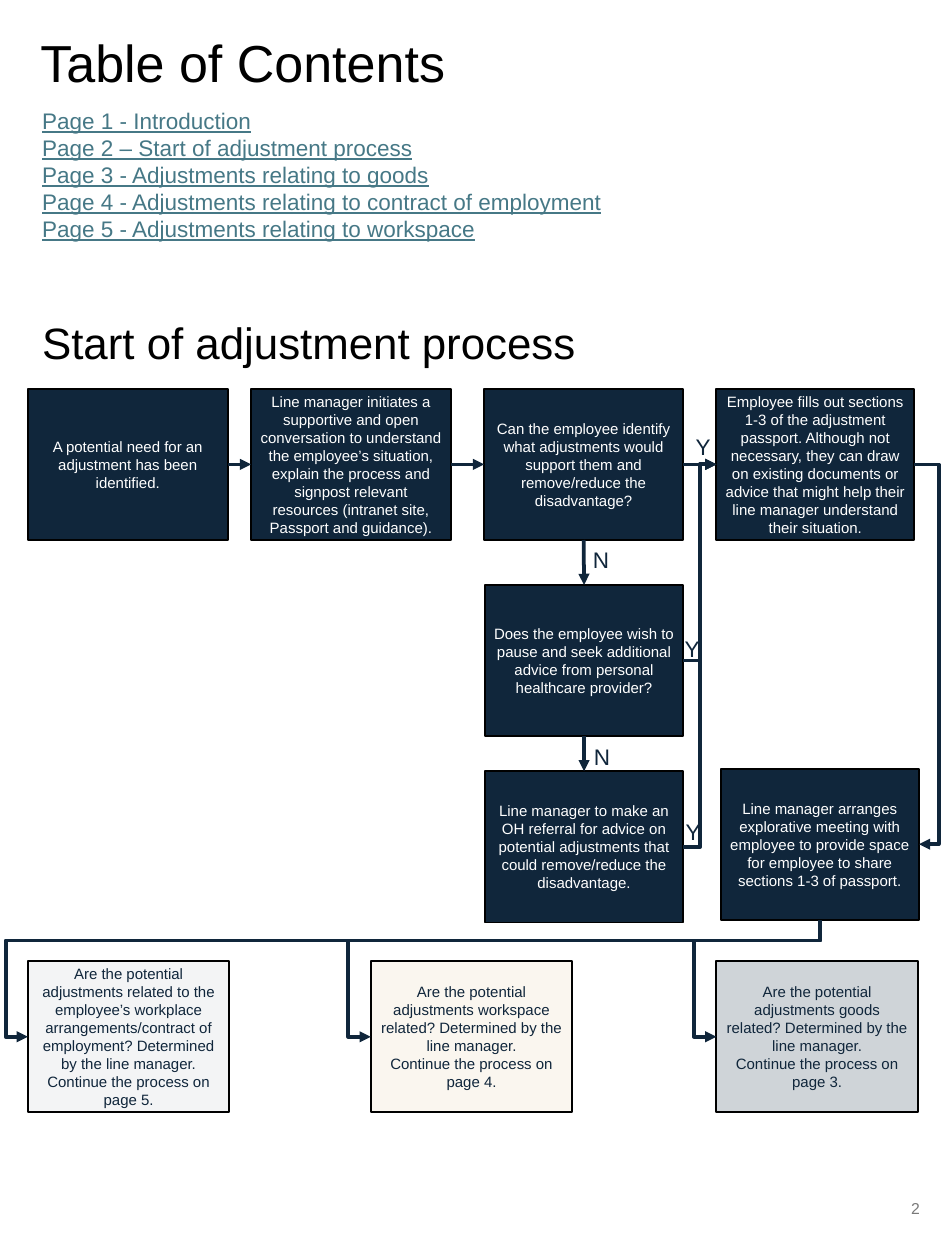
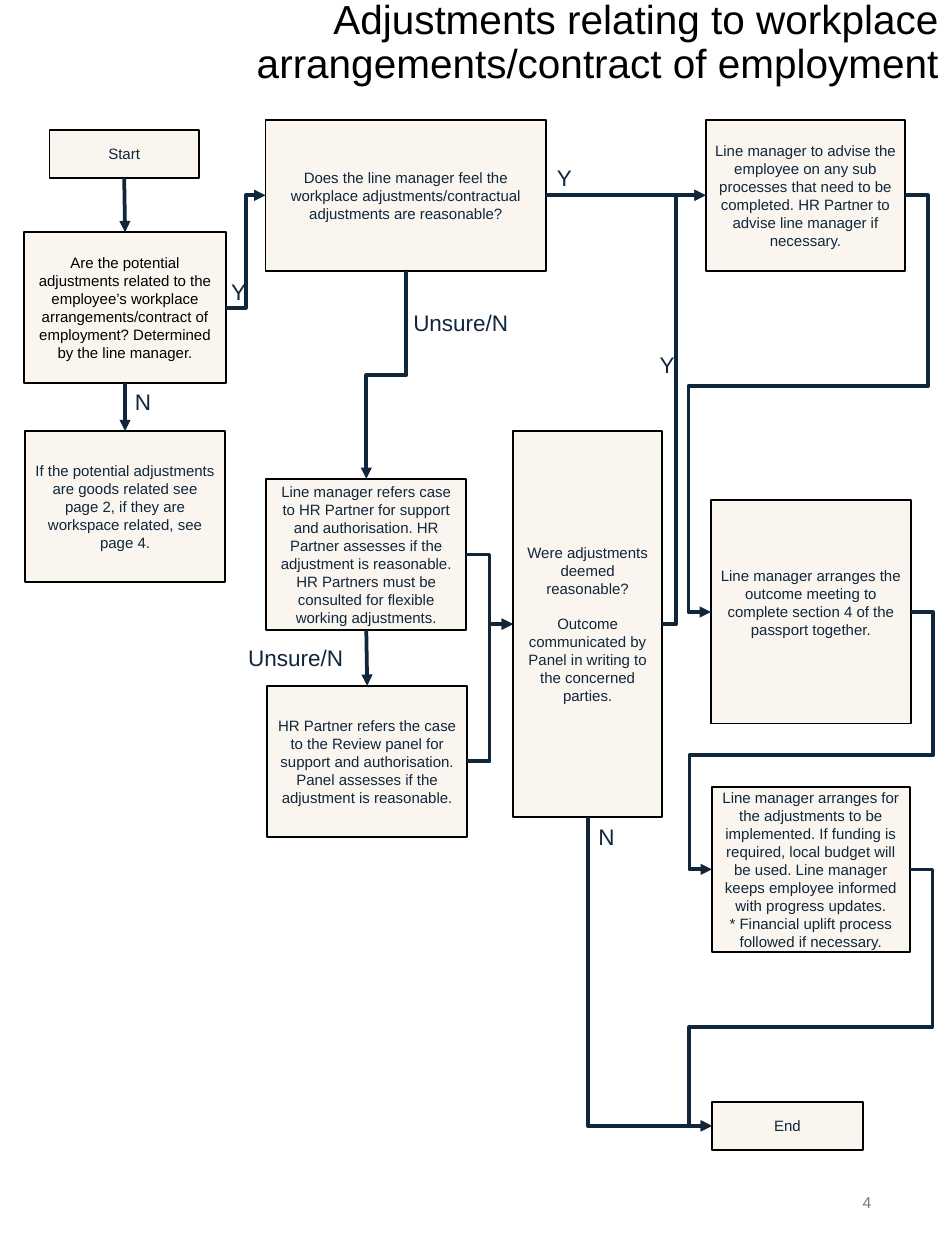
"""Build two flowchart slides about the workplace adjustment process."""
import pptx
import pptx.dml.color
import pptx.enum.shapes
import pptx.enum.text
import pptx.oxml
import pptx.oxml.ns
import pptx.util

Inches = pptx.util.Inches
ALIGN = pptx.enum.text.PP_ALIGN
MIDDLE = pptx.enum.text.MSO_ANCHOR.MIDDLE
CONNECTOR = pptx.enum.shapes.MSO_CONNECTOR

FONT = "Arial"
NAVY, WHITE, BLACK = "10263B", "FFFFFF", "000000"
CREAM, MIST, SILVER = "FAF6EF", "F3F4F5", "CFD4D8"
LINK, GREY = "467886", "797979"
TOP, LEFT, BOTTOM, RIGHT = range(4)
BOX_HEIGHT = 1.68


def color(value):
    """Return the colour for a hex string."""
    return pptx.dml.color.RGBColor.from_string(value)


def make_element(tag, **attributes):
    """Return a new drawing element with the given attributes."""
    element = pptx.oxml.parse_xml(f"<a:{tag} {pptx.oxml.ns.nsdecls('a')}/>")
    for name, value in attributes.items():
        element.set(name, str(value))
    return element


def write_text(shape, paragraphs, size, font_color, align, line_spacing=None,
               underline=None, gap=0):
    """Fill a shape with paragraphs set in one style."""
    frame = shape.text_frame
    frame.word_wrap = True
    for index, text in enumerate(paragraphs):
        paragraph = frame.add_paragraph() if index else frame.paragraphs[0]
        paragraph.alignment = align
        if line_spacing:
            paragraph.line_spacing = line_spacing
        if index and gap:
            paragraph.space_before = pptx.util.Pt(gap)
        run = paragraph.add_run()
        run.text = text
        run.font.name = FONT
        run.font.size = pptx.util.Pt(size)
        run.font.color.rgb = color(font_color)
        run.font.underline = underline


def add_text(slide, left, top, width, height, paragraphs, size, font_color,
             align=ALIGN.LEFT, anchor=MIDDLE, **style):
    """Add a text box."""
    shape = slide.shapes.add_textbox(
        Inches(left), Inches(top), Inches(width), Inches(height))
    shape.text_frame.vertical_anchor = anchor
    write_text(shape, paragraphs, size, font_color, align, **style)


def add_title(slide, left, top, width, height, text, size, align=ALIGN.LEFT):
    """Add a heading."""
    add_text(slide, left, top, width, height, [text], size, BLACK, align,
             line_spacing=0.9)


def add_page_number(slide, left, top, number):
    """Add the page number."""
    add_text(slide, left, top, 2.36, 0.75, [number], 12.6, GREY, ALIGN.RIGHT)


def add_label(slide, left, top, text, width=0.29):
    """Add the answer beside an arrow."""
    add_text(slide, left, top, width, 0.4, [text], 18, NAVY, ALIGN.CENTER,
             pptx.enum.text.MSO_ANCHOR.TOP)


def add_box(slide, left, top, width, *paragraphs, height=BOX_HEIGHT,
            fill=CREAM, font_color=NAVY, gap=0):
    """Add a step of the flowchart."""
    shape = slide.shapes.add_shape(
        pptx.enum.shapes.MSO_SHAPE.RECTANGLE,
        Inches(left), Inches(top), Inches(width), Inches(height))
    shape.shadow.inherit = False
    shape.fill.solid()
    shape.fill.fore_color.rgb = color(fill)
    shape.line.color.rgb = color(BLACK)
    shape.line.width = pptx.util.Pt(1.5)
    shape.text_frame.vertical_anchor = MIDDLE
    write_text(shape, paragraphs, 12, font_color, ALIGN.CENTER, gap=gap)
    return shape


def add_dark_box(slide, left, top, width, text):
    """Add a navy step with white text."""
    return add_box(slide, left, top, width, text, fill=NAVY, font_color=WHITE)


def side_middle(shape, side):
    """Return the middle point of one side of a box."""
    across = {LEFT: 0, RIGHT: shape.width}.get(side, shape.width // 2)
    down = {TOP: 0, BOTTOM: shape.height}.get(side, shape.height // 2)
    return shape.left + across, shape.top + down


def add_arrow(slide, source, source_side, target, target_side,
              kind=CONNECTOR.STRAIGHT):
    """Join two boxes with an arrow."""
    connector = slide.shapes.add_connector(kind, 0, 0, 0, 0)
    connector.begin_connect(source, source_side)
    connector.end_connect(target, target_side)
    connector.line.color.rgb = color(NAVY)
    connector.line.width = pptx.util.Pt(3)
    connector.line._get_or_add_ln().append(
        make_element("tailEnd", type="triangle"))
    connector.element.spPr.append(make_element("effectLst"))
    return connector


def add_elbow(slide, source, source_side, target, target_side, *bends):
    """Join two boxes with a bent arrow turning at the given inches."""
    connector = add_arrow(slide, source, source_side, target, target_side,
                          CONNECTOR.ELBOW)
    start = side_middle(source, source_side)
    end = side_middle(target, target_side)
    span = [end[axis] - start[axis] for axis in (0, 1)]
    vertical = source_side in (TOP, BOTTOM)
    width, height = abs(span[0]), abs(span[1])
    center_x, center_y = (start[0] + end[0]) // 2, (start[1] + end[1]) // 2
    if vertical:
        width, height = height, width
    connector.left, connector.top = center_x - width // 2, center_y - height // 2
    connector.width, connector.height = width, height

    turned_right = vertical and span[0] > 0
    flip_h = turned_right if vertical else span[0] < 0
    flip_v = not vertical and span[1] < 0
    angle = (270 if turned_right else 90) if vertical else 0
    transform = connector.element.spPr.find(pptx.oxml.ns.qn("a:xfrm"))
    transform.set("rot", str(angle * 60000))
    transform.set("flipH", str(int(flip_h)))
    transform.set("flipV", str(int(flip_v)))

    geometry = connector.element.spPr.find(pptx.oxml.ns.qn("a:prstGeom"))
    geometry.set("prst", f"bentConnector{len(bends) + 2}")
    guides = geometry.find(pptx.oxml.ns.qn("a:avLst"))
    if guides is None:
        guides = make_element("avLst")
        geometry.append(guides)
    for index, bend in enumerate(bends):
        axis = (index + vertical) % 2
        ratio = (Inches(bend) - start[axis]) / span[axis]
        guides.append(make_element(
            "gd", name=f"adj{index + 1}", fmla=f"val {round(ratio * 100000)}"))


def build_start(slide):
    """Build the contents and the start of the process."""
    add_title(slide, 0.35, 0.43, 9.06, 0.6, "Table of Contents", 41.6)
    add_text(slide, 0.37, 1.14, 9.35, 1.62, [
        "Page 1 - Introduction",
        "Page 2 – Start of adjustment process",
        "Page 3 - Adjustments relating to goods",
        "Page 4 - Adjustments relating to contract of employment",
        "Page 5 - Adjustments relating to workspace",
    ], 18, LINK, anchor=pptx.enum.text.MSO_ANCHOR.TOP, underline=True)
    add_title(slide, 0.37, 3.5, 6.19, 0.68, "Start of adjustment process", 35.1)

    row = 4.32
    need = add_dark_box(slide, 0.31, row, 2.22,
                        "A potential need for an adjustment has been identified.")
    conversation = add_dark_box(
        slide, 2.79, row, 2.22,
        "Line manager initiates a supportive and open conversation to "
        "understand the employee’s situation, explain the process and signpost "
        "relevant resources (intranet site, Passport and guidance).")
    identify = add_dark_box(
        slide, 5.38, row, 2.21,
        "Can the employee identify what adjustments would support them and "
        "remove/reduce the disadvantage?")
    passport = add_dark_box(
        slide, 7.96, row, 2.2,
        "Employee fills out sections 1-3 of the adjustment passport. Although "
        "not necessary, they can draw on existing documents or advice that "
        "might help their line manager understand their situation.")
    advice = add_dark_box(
        slide, 5.39, 6.5, 2.2,
        "Does the employee wish to pause and seek additional advice from "
        "personal healthcare provider?")
    referral = add_dark_box(
        slide, 5.39, 8.57, 2.2,
        "Line manager to make an OH referral for advice on potential "
        "adjustments that could remove/reduce the disadvantage.")
    meeting = add_dark_box(
        slide, 8.01, 8.54, 2.2,
        "Line manager arranges explorative meeting with employee to provide "
        "space for employee to share sections 1-3 of passport.")

    for source, target in ((need, conversation), (conversation, identify),
                           (identify, passport)):
        add_arrow(slide, source, RIGHT, target, LEFT)
    for source, target in ((identify, advice), (advice, referral)):
        add_arrow(slide, source, BOTTOM, target, TOP)
    for source in (advice, referral):
        add_elbow(slide, source, RIGHT, passport, LEFT, 7.78)
    add_elbow(slide, passport, RIGHT, meeting, RIGHT, 10.43)

    outcomes = (
        (0.31, MIST, "related to the employee’s workplace "
                     "arrangements/contract of employment", 5),
        (4.12, CREAM, "workspace related", 4),
        (7.96, SILVER, "goods related", 3),
    )
    for left, fill, topic, page in outcomes:
        outcome = add_box(
            slide, left, 10.68, 2.24,
            f"Are the potential adjustments {topic}? "
            "Determined by the line manager.",
            f"Continue the process on page {page}.", fill=fill)
        add_elbow(slide, meeting, BOTTOM, outcome, LEFT, 10.45, left - 0.25)

    for left, top, answer in ((7.63, 4.76, "Y"), (7.51, 7.01, "Y"),
                              (7.52, 9.04, "Y"), (6.49, 6.02, "N"),
                              (6.5, 8.21, "N")):
        add_label(slide, left, top, answer)
    add_page_number(slide, 7.96, 13.05, "2")


def build_contract(slide):
    """Build the process for contract adjustments."""
    add_title(slide, 0, 0.02, 10.53, 0.92,
              "Adjustments relating to workplace arrangements/contract of "
              "employment", 32.4, ALIGN.RIGHT)
    start = add_box(slide, 0.55, 1.44, 1.66, "Start", height=0.54)
    related = add_box(
        slide, 0.27, 2.58, 2.24,
        "Are the potential adjustments related to the employee’s workplace "
        "arrangements/contract of employment? Determined by the line manager.",
        font_color=BLACK)
    other = add_box(
        slide, 0.28, 4.79, 2.22,
        "If the potential adjustments are goods related see page 2, if they "
        "are workspace related, see page 4.")
    reasonable = add_box(
        slide, 2.95, 1.33, 3.12,
        "Does the line manager feel the workplace adjustments/contractual "
        "adjustments are reasonable?")
    partner = add_box(
        slide, 2.96, 5.32, 2.22,
        "Line manager refers case to HR Partner for support and authorisation. "
        "HR Partner assesses if the adjustment is reasonable.",
        "HR Partners must be consulted for flexible working adjustments.")
    panel = add_box(
        slide, 2.97, 7.62, 2.22,
        "HR Partner refers the case to the Review panel for support and "
        "authorisation. Panel assesses if the adjustment is reasonable.")
    verdict = add_box(
        slide, 5.7, 4.79, 1.66, "Were adjustments deemed reasonable?",
        "Outcome communicated by Panel in writing to the concerned parties.",
        height=4.29, gap=14)
    advise = add_box(
        slide, 7.84, 1.33, 2.22,
        "Line manager to advise the employee on any sub processes that need to "
        "be completed. HR Partner to advise line manager if necessary.")
    meeting = add_box(
        slide, 7.9, 5.56, 2.22,
        "Line manager arranges the outcome meeting to complete section 4 of "
        "the passport together.", height=2.48)
    meeting.text_frame.margin_bottom = Inches(0.25)
    implement = add_box(
        slide, 7.91, 8.74, 2.2,
        "Line manager arranges for the adjustments to be implemented. If "
        "funding is required, local budget will be used. Line manager keeps "
        "employee informed with progress updates.",
        "* Financial uplift process followed if necessary.", height=1.84)
    end = add_box(slide, 7.91, 12.24, 1.68, "End", height=0.54)

    for source, target in ((start, related), (related, other), (partner, panel)):
        add_arrow(slide, source, BOTTOM, target, TOP)
    add_arrow(slide, reasonable, RIGHT, advise, LEFT)
    add_elbow(slide, related, RIGHT, reasonable, LEFT, 2.73)
    add_elbow(slide, reasonable, BOTTOM, partner, TOP, 4.17)
    for source in (partner, panel):
        add_elbow(slide, source, RIGHT, verdict, LEFT, 5.44)
    add_elbow(slide, verdict, RIGHT, advise, LEFT, 7.51)
    add_elbow(slide, verdict, BOTTOM, end, LEFT)
    add_elbow(slide, advise, RIGHT, meeting, LEFT, 10.31, 4.29, 7.65)
    add_elbow(slide, meeting, RIGHT, implement, LEFT, 10.37, 8.39, 7.66)
    add_elbow(slide, implement, RIGHT, end, LEFT, 10.36, 11.41, 7.66)

    for left, top, answer in ((2.47, 3.04, "Y"), (6.09, 1.77, "Y"),
                              (7.23, 3.85, "Y"), (1.4, 4.26, "N"),
                              (6.55, 9.09, "N")):
        add_label(slide, left, top, answer)
    add_label(slide, 2.48, 7.11, "Unsure/N", 1.61)
    add_label(slide, 4.22, 3.38, "Unsure/N", 1.8)
    add_page_number(slide, 7.42, 12.98, "4")


def main():
    """Build and save the presentation."""
    presentation = pptx.Presentation()
    presentation.slide_width = Inches(10.5)
    presentation.slide_height = Inches(14)
    for build in (build_start, build_contract):
        build(presentation.slides.add_slide(presentation.slide_layouts[6]))
    presentation.save("out.pptx")


if __name__ == "__main__":
    main()
